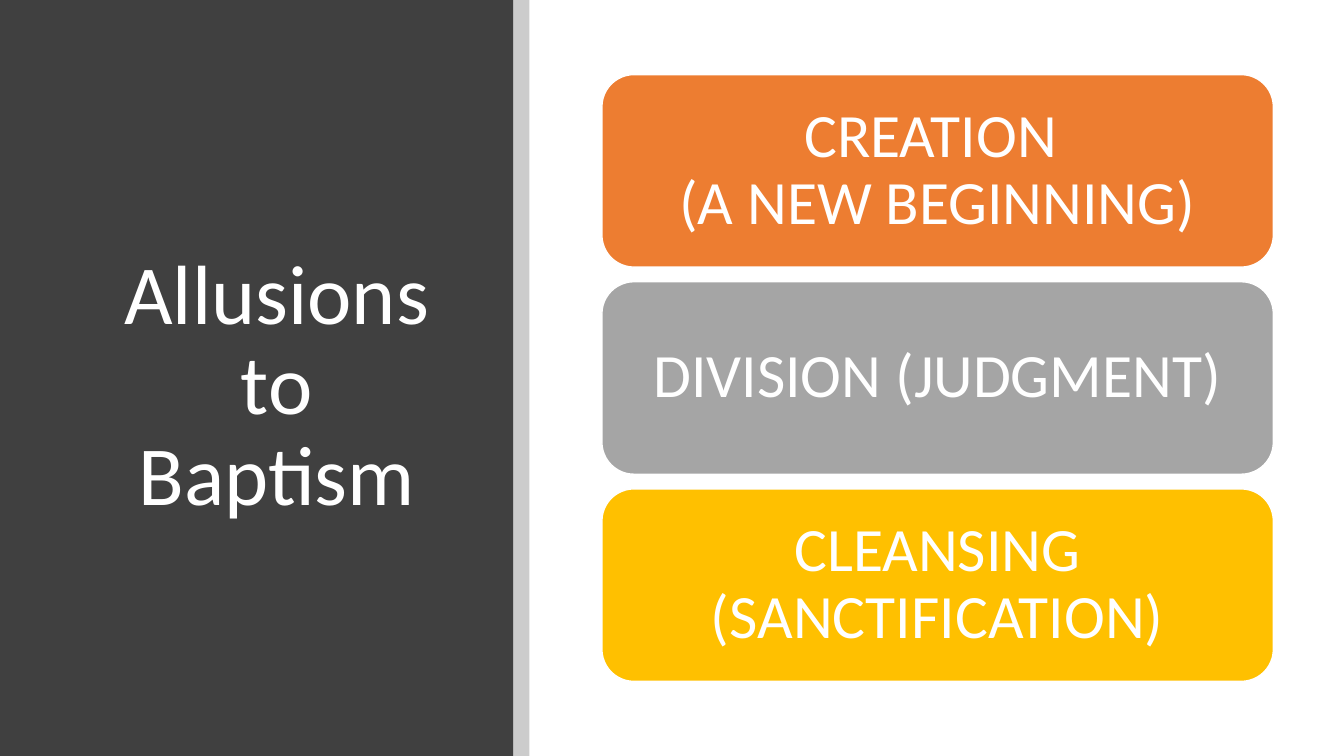
from typing import NamedTuple

from lxml.etree import SubElement
from pptx import Presentation
from pptx.dml.color import RGBColor
from pptx.enum.shapes import MSO_SHAPE
from pptx.enum.text import MSO_ANCHOR, MSO_AUTO_SIZE, PP_ALIGN
from pptx.oxml.ns import qn
from pptx.shapes.autoshape import Shape
from pptx.slide import Slide
from pptx.util import Inches, Pt

WHITE = RGBColor(0xFF, 0xFF, 0xFF)
BLACK = RGBColor(0x00, 0x00, 0x00)
CHARCOAL = RGBColor(0x40, 0x40, 0x40)
ORANGE = RGBColor(0xED, 0x7D, 0x31)
GRAY = RGBColor(0xA5, 0xA5, 0xA5)
GOLD = RGBColor(0xFF, 0xC0, 0x00)

SLIDE_WIDTH, SLIDE_HEIGHT = 13.33, 7.5
PANEL_WIDTH, STRIP_WIDTH = 5.09, 0.16
CARD_LEFT, CARD_TOP, CARD_WIDTH, CARD_HEIGHT = 5.97, 0.74, 6.66, 1.91
CARD_PITCH = 2.055
CARD_MARGIN = 0.18


class Card(NamedTuple):
    text: str
    color: RGBColor


CARDS = [
    Card("CREATION \v(A NEW BEGINNING)", ORANGE),
    Card("DIVISION (JUDGMENT)", GRAY),
    Card("CLEANSING (SANCTIFICATION)", GOLD),
]


def add_filled_shape(slide: Slide, kind: MSO_SHAPE, left: float, top: float,
                     width: float, height: float, color: RGBColor) -> Shape:
    shape = slide.shapes.add_shape(
        kind, Inches(left), Inches(top), Inches(width), Inches(height))
    shape.shadow.inherit = False
    shape.fill.solid()
    shape.fill.fore_color.rgb = color
    shape.line.fill.background()
    return shape


def write_text(shape: Shape, text: str, size: int, margins: dict[str, float]) -> None:
    """Fill a shape with centred white text; margins are in inches."""
    frame = shape.text_frame
    frame.text = text
    frame_format = {
        "word_wrap": True,
        "auto_size": MSO_AUTO_SIZE.NONE,
        "vertical_anchor": MSO_ANCHOR.MIDDLE,
        **{f"margin_{side}": Inches(margin) for side, margin in margins.items()},
    }
    for name, value in frame_format.items():
        setattr(frame, name, value)
    paragraph = frame.paragraphs[0]
    paragraph.alignment = PP_ALIGN.CENTER
    paragraph.line_spacing = 0.9
    for run in paragraph.runs:
        for name, value in {"name": "Calibri", "size": Pt(size), "bold": False}.items():
            setattr(run.font, name, value)
        run.font.color.rgb = WHITE


def set_opacity(shape: Shape, percent: int) -> None:
    color = shape.element.spPr.find(f"{qn('a:solidFill')}/{qn('a:srgbClr')}")
    SubElement(color, qn("a:alpha"), val=str(percent * 1000))


def add_title(slide: Slide) -> None:
    title = slide.shapes.title
    position = {"left": 0.92, "top": 0.89, "width": 3.65, "height": 5.91}
    for name, value in position.items():
        setattr(title, name, Inches(value))
    write_text(title, "Allusions to Baptism", 60,
               {"left": 0.1, "right": 0.1, "top": 0.05, "bottom": 0.05})


def add_side_panel(slide: Slide) -> None:
    """Place the dark panel behind the title, with its translucent edge strip."""
    panel = add_filled_shape(
        slide, MSO_SHAPE.RECTANGLE, 0, 0, PANEL_WIDTH, SLIDE_HEIGHT, CHARCOAL)
    slide.shapes.title.element.addprevious(panel.element)
    strip = add_filled_shape(
        slide, MSO_SHAPE.RECTANGLE, PANEL_WIDTH, 0, STRIP_WIDTH, SLIDE_HEIGHT, BLACK)
    set_opacity(strip, 20)


def add_card(slide: Slide, card: Card, top: float) -> None:
    shape = add_filled_shape(slide, MSO_SHAPE.ROUNDED_RECTANGLE, CARD_LEFT, top,
                             CARD_WIDTH, CARD_HEIGHT, card.color)
    shape.line.color.rgb = WHITE
    shape.line.width = Pt(1)
    write_text(shape, card.text, 44,
               dict.fromkeys(("left", "right", "top", "bottom"), CARD_MARGIN))


def main() -> None:
    presentation = Presentation()
    presentation.slide_width = Inches(SLIDE_WIDTH)
    presentation.slide_height = Inches(SLIDE_HEIGHT)
    title_only = presentation.slide_layouts.get_by_name("Title Only")
    slide = presentation.slides.add_slide(title_only)
    add_title(slide)
    add_side_panel(slide)
    for index, card in enumerate(CARDS):
        add_card(slide, card, CARD_TOP + index * CARD_PITCH)
    presentation.save("out.pptx")


if __name__ == "__main__":
    main()
